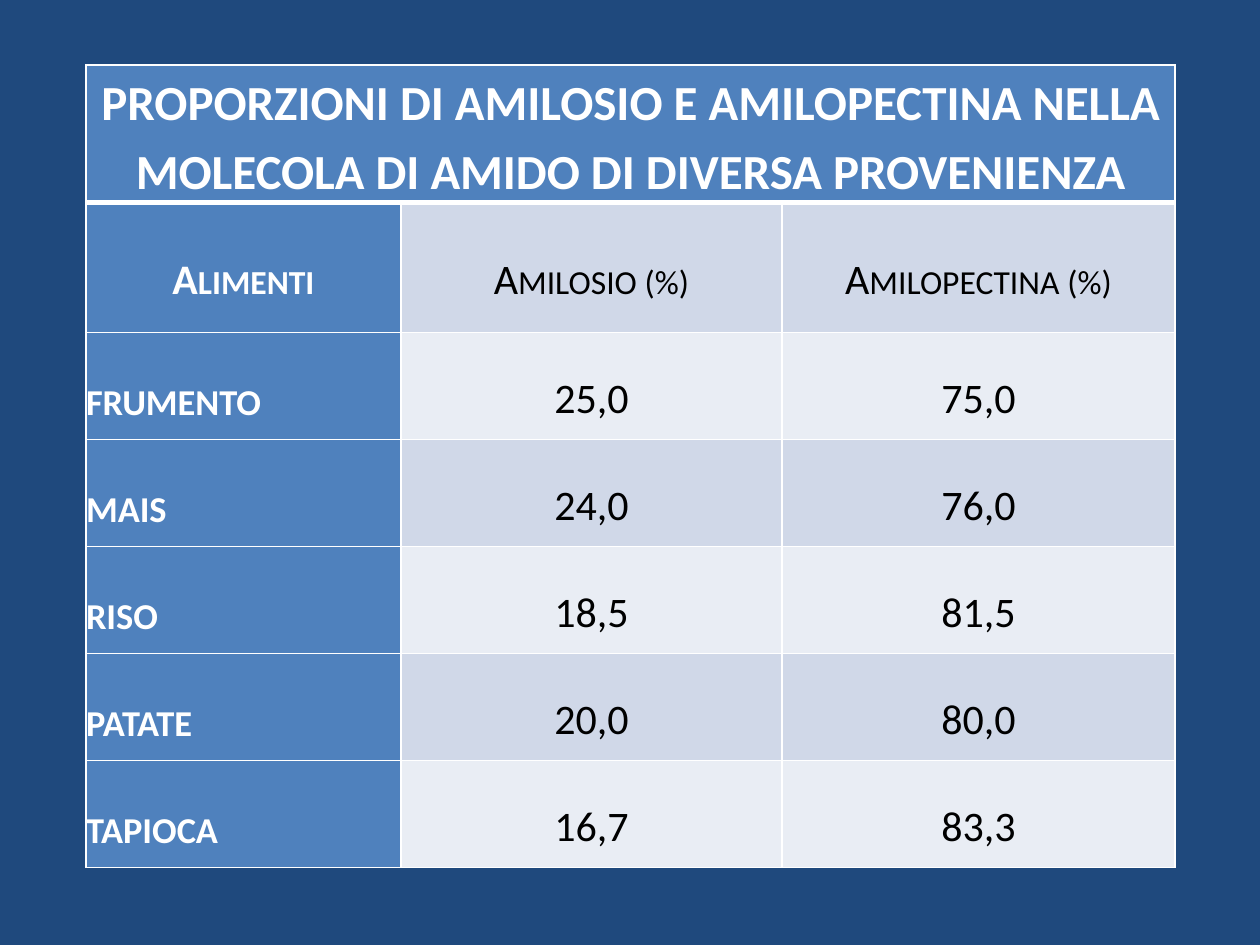
from dataclasses import dataclass

from lxml import etree
from pptx import Presentation
from pptx import util as u
from pptx.dml.color import RGBColor
from pptx.enum import text
from pptx.oxml.ns import qn

TITLE = "PROPORZIONI DI AMILOSIO E AMILOPECTINA NELLA MOLECOLA DI AMIDO DI DIVERSA PROVENIENZA"
HEADINGS = ("Alimenti", "Amilosio (%)", "Amilopectina (%)")
FOODS = [
    ("frumento", "25,0", "75,0"),
    ("mais", "24,0", "76,0"),
    ("riso", "18,5", "81,5"),
    ("patate", "20,0", "80,0"),
    ("tapioca", "16,7", "83,3"),
]
COLUMN_WIDTHS = (315, 381, 393)
ROW_HEIGHTS = (96, 130) + (107,) * len(FOODS)
LEFT, TOP, HEIGHT = 86, 65, 804


@dataclass(frozen=True)
class Theme:
    font: str = "Calibri"
    background: str = "1F497D"
    accent: str = "4F81BD"
    bands: tuple = ("D0D8E8", "E9EDF4")
    light: str = "FFFFFF"
    dark: str = "000000"
    title_size: int = 28
    food_size: int = 26
    body_size: int = 24
    thin: int = 1
    thick: int = 3


THEME = Theme()


def px(length):
    return u.Emu(length * 914400 // 126)


def color(value):
    return RGBColor.from_string(value)


def draw_borders(cell, top=THEME.thin, bottom=THEME.thin):
    properties = cell._tc.get_or_add_tcPr()
    widths = {"lnL": THEME.thin, "lnR": THEME.thin, "lnT": top, "lnB": bottom}
    for position, (side, width) in enumerate(widths.items()):
        line = etree.Element(qn(f"a:{side}"), w=str(u.Pt(width)))
        fill = etree.SubElement(line, qn("a:solidFill"))
        etree.SubElement(fill, qn("a:srgbClr"), val=THEME.light)
        properties.insert(position, line)


def fill_cell(cell, words, background, ink, size, bold, small_caps, align, spacing):
    cell.fill.solid()
    cell.fill.fore_color.rgb = color(background)
    cell.margin_left = cell.margin_right = cell.margin_top = cell.margin_bottom = 0
    cell.vertical_anchor = text.MSO_ANCHOR.MIDDLE
    cell.text_frame.text = words
    paragraph = cell.text_frame.paragraphs[0]
    paragraph.alignment = align
    paragraph.line_spacing = spacing
    for run in paragraph.runs:
        run.font.name = THEME.font
        run.font.size = u.Pt(size)
        run.font.bold = bold
        run.font.color.rgb = color(ink)
        if small_caps:
            run.font._element.set("cap", "small")
    return paragraph


def add_starch_table(slide):
    rows = [HEADINGS] + FOODS
    frame = slide.shapes.add_table(
        len(ROW_HEIGHTS), len(COLUMN_WIDTHS),
        px(LEFT), px(TOP), px(sum(COLUMN_WIDTHS)), px(HEIGHT))
    table = frame.table
    for column, width in zip(table.columns, COLUMN_WIDTHS):
        column.width = px(width)
    for row, height in zip(table.rows, ROW_HEIGHTS):
        row.height = px(height)
    frame.height = px(HEIGHT)

    center = text.PP_ALIGN.CENTER
    title_cell = table.cell(0, 0)
    title_cell.merge(table.cell(0, len(COLUMN_WIDTHS) - 1))
    title = fill_cell(title_cell, TITLE, THEME.accent, THEME.light,
                      THEME.title_size, True, False, center, 1.15)
    title.space_before = title.space_after = u.Pt(9.8)
    for column in range(len(COLUMN_WIDTHS)):
        draw_borders(table.cell(0, column), bottom=THEME.thick)

    for index, row in enumerate(rows):
        heading = index == 0
        for column, words in enumerate(row):
            label = column == 0
            food = label and not heading
            cell = table.cell(index + 1, column)
            fill_cell(
                cell, words,
                THEME.accent if label else THEME.bands[index % 2],
                THEME.light if label else THEME.dark,
                THEME.food_size if food else THEME.body_size,
                label, label or heading,
                text.PP_ALIGN.JUSTIFY if food else center, 1.5)
            draw_borders(cell, top=THEME.thick if heading else THEME.thin)


def main():
    deck = Presentation()
    deck.slide_width, deck.slide_height = px(1260), px(945)
    slide = deck.slides.add_slide(deck.slide_layouts[6])
    slide.background.fill.solid()
    slide.background.fill.fore_color.rgb = color(THEME.background)
    add_starch_table(slide)
    deck.save("out.pptx")


if __name__ == "__main__":
    main()
